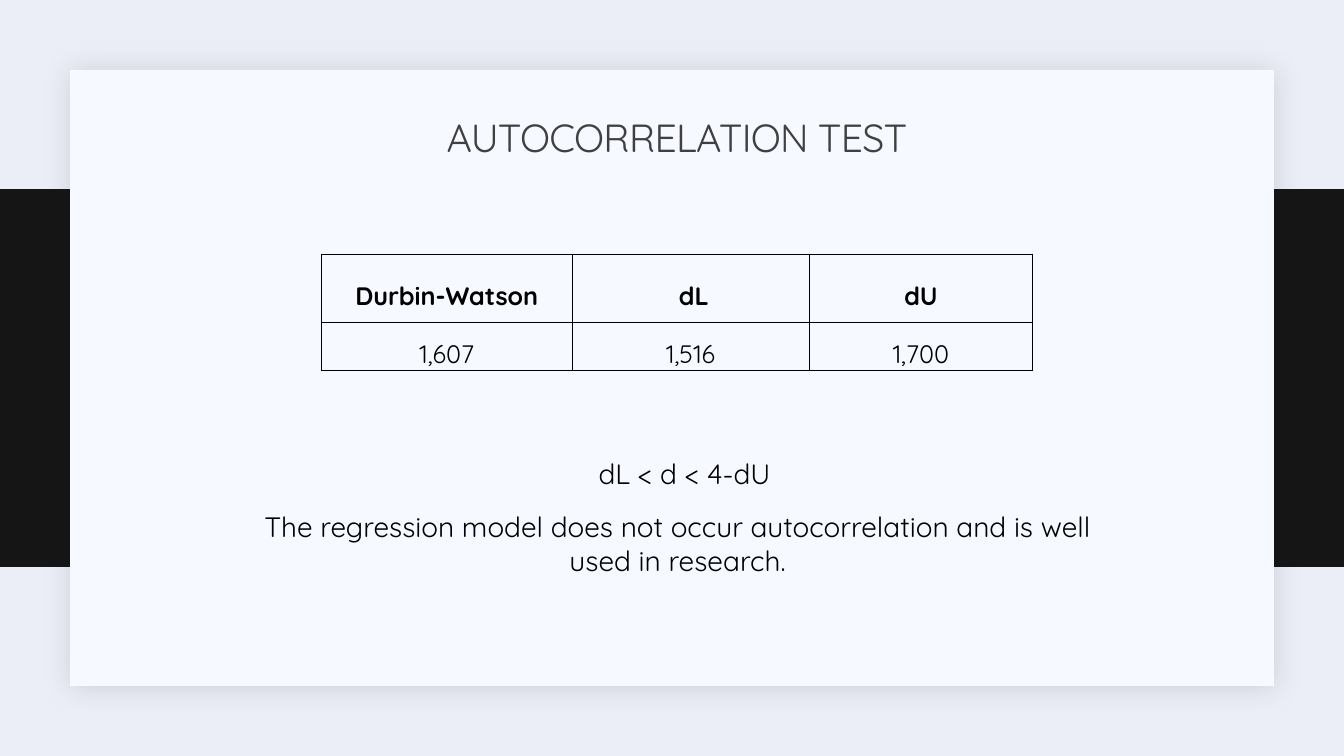
from pptx import Presentation
from pptx.dml.color import RGBColor
from pptx.enum.shapes import MSO_SHAPE
from pptx.enum.text import MSO_ANCHOR, PP_ALIGN
from pptx.oxml import parse_xml
from pptx.oxml.ns import nsdecls
from pptx.util import Pt

FONT = "Quicksand"
BACKDROP = RGBColor(0xEC, 0xEE, 0xF7)
BAND = RGBColor(0x14, 0x15, 0x14)
CARD = RGBColor(0xF6, 0xF9, 0xFF)
SHADOW = RGBColor(0x1F, 0x21, 0x25)
TITLE = RGBColor(0x40, 0x40, 0x40)
BLACK = RGBColor(0, 0, 0)

ROWS = [("Durbin-Watson", "dL", "dU"), ("1,607", "1,516", "1,700")]
COLUMN_WIDTHS = [179.3, 169.2, 159.8]
ROW_HEIGHTS = [49, 33.8]
CONCLUSION = [
    "dL < d < 4-dU",
    "The regression model does not occur autocorrelation and is well used in research.",
]


def style_paragraph(para, size, color, bold=False):
    para.alignment = PP_ALIGN.CENTER
    para.font.name = FONT
    para.font.size = Pt(size)
    para.font.color.rgb = color
    para.font.bold = bold


def set_indent(para, left, first=0):
    properties = para._p.get_or_add_pPr()
    properties.set("marL", str(Pt(left)))
    properties.set("indent", str(Pt(first)))
    return properties


def add_panel(page, left, top, width, height, color):
    panel = page.shapes.add_shape(
        MSO_SHAPE.RECTANGLE, Pt(left), Pt(top), Pt(width), Pt(height))
    panel.shadow.inherit = False
    panel.fill.solid()
    panel.fill.fore_color.rgb = color
    panel.line.fill.background()
    return panel


def add_soft_shadow(panel):
    panel._element.spPr.find("{*}effectLst").append(parse_xml(
        f'<a:outerShdw {nsdecls("a")} blurRad="{Pt(20)}" dist="{Pt(2)}" '
        f'dir="{45 * 60000}" algn="ctr" rotWithShape="0">'
        f'<a:srgbClr val="{SHADOW}"><a:alpha val="15000"/></a:srgbClr></a:outerShdw>'))


def set_title(page, text):
    title = page.shapes.title
    title.left, title.top, title.width, title.height = Pt(170), Pt(77), Pt(627), Pt(46)
    frame = title.text_frame
    frame.text = text
    frame.word_wrap = True
    frame.vertical_anchor = MSO_ANCHOR.MIDDLE
    para = frame.paragraphs[0]
    style_paragraph(para, 28, TITLE)
    para.line_spacing = 0.9
    para.runs[0].font._element.set("spc", "-50")
    page.shapes._spTree.append(title._element)


def add_borders(cell):
    properties = cell._tc.get_or_add_tcPr()
    for position, side in enumerate(("lnL", "lnR", "lnT", "lnB")):
        properties.insert(position, parse_xml(
            f'<a:{side} {nsdecls("a")} w="{Pt(1)}"><a:solidFill>'
            f'<a:srgbClr val="{BLACK}"/></a:solidFill></a:{side}>'))


def fill_cell(cell, text, bold):
    cell.fill.background()
    cell.vertical_anchor = MSO_ANCHOR.MIDDLE
    cell.margin_left = cell.margin_right = Pt(5)
    cell.margin_top = cell.margin_bottom = 0
    cell.text = text
    para = cell.text_frame.paragraphs[0]
    style_paragraph(para, 18, BLACK, bold)
    para.line_spacing = 1.5
    if text == "dL":
        set_indent(para, 4.5)
    add_borders(cell)


def add_statistics_table(page):
    table = page.shapes.add_table(
        len(ROWS), len(COLUMN_WIDTHS), Pt(229.5), Pt(181.5),
        Pt(sum(COLUMN_WIDTHS)), Pt(sum(ROW_HEIGHTS))).table
    table.horz_banding = False
    for column, width in zip(table.columns, COLUMN_WIDTHS):
        column.width = Pt(width)
    for index, (row, height) in enumerate(zip(table.rows, ROW_HEIGHTS)):
        row.height = Pt(height)
        for cell, text in zip(row.cells, ROWS[index]):
            fill_cell(cell, text, bold=index == 0)


def add_conclusion(page):
    box = page.shapes.add_textbox(Pt(165), Pt(322.5), Pt(638), Pt(98))
    frame = box.text_frame
    frame.word_wrap = True
    frame.margin_left = frame.margin_right = 0
    frame.text = "\n".join(CONCLUSION)
    for para in frame.paragraphs:
        style_paragraph(para, 20, BLACK)
        para.space_before = Pt(12)
        para.space_after = Pt(2)
    properties = set_indent(frame.paragraphs[0], 7.2, -7.2)
    bullet = parse_xml(f'<a:buChar {nsdecls("a")} char=" "/>')
    properties.find("{*}defRPr").addprevious(bullet)


def main():
    deck = Presentation()
    deck.slide_width, deck.slide_height = Pt(960), Pt(540)
    page = deck.slides.add_slide(deck.slide_layouts[5])
    page.background.fill.solid()
    page.background.fill.fore_color.rgb = BACKDROP
    add_panel(page, 0, 135, 960, 270, BAND)
    add_soft_shadow(add_panel(page, 50, 50, 860, 440, CARD))
    set_title(page, "AUTOCORRELATION TEST")
    add_statistics_table(page)
    add_conclusion(page)
    deck.save("out.pptx")


if __name__ == "__main__":
    main()
